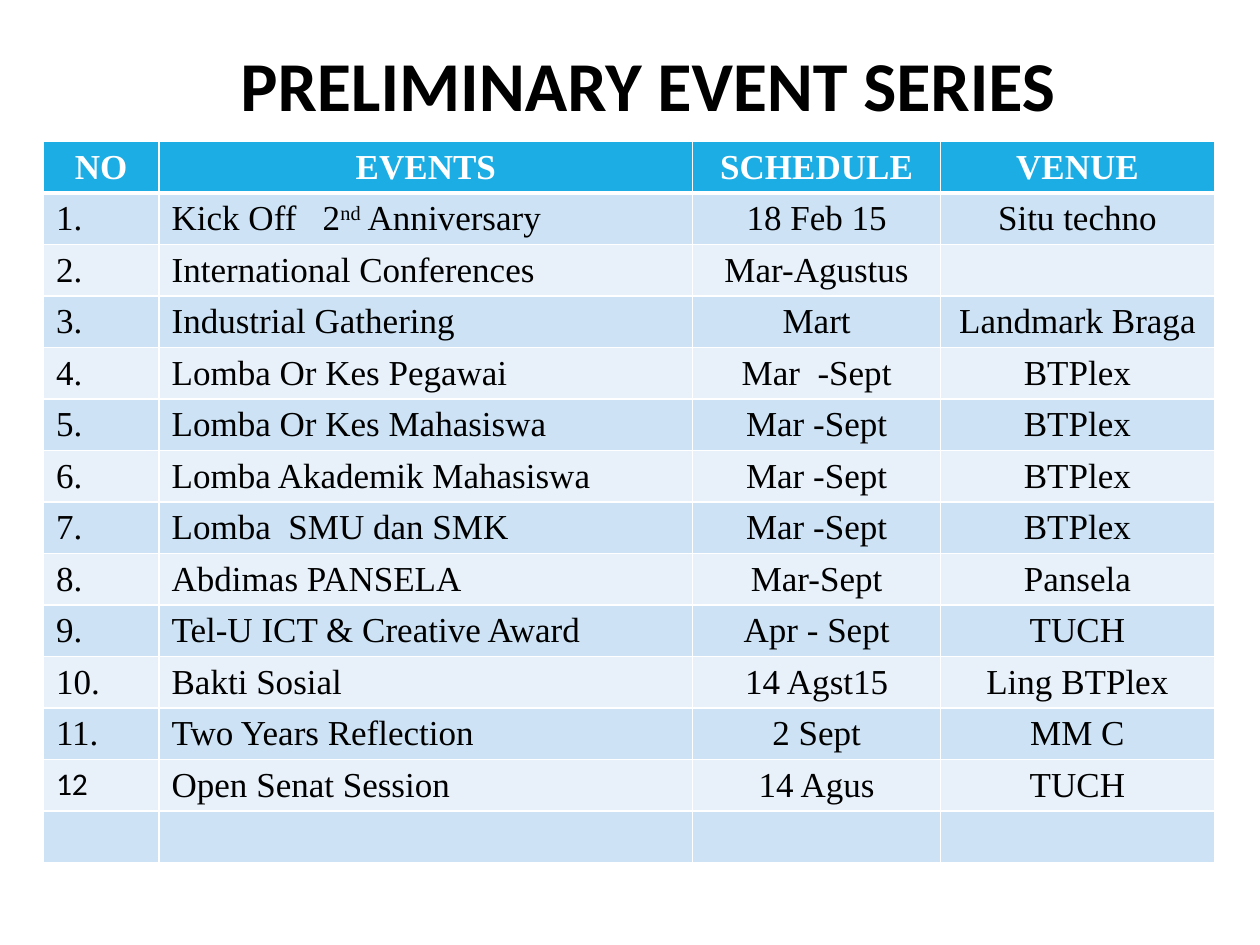
import pptx
import pptx.dml.color
import pptx.enum.text
import pptx.oxml
import pptx.oxml.ns
import pptx.util

Pt = pptx.util.Pt
RGBColor = pptx.dml.color.RGBColor
ALIGN = pptx.enum.text.PP_ALIGN

BLACK = RGBColor(0x00, 0x00, 0x00)
WHITE = RGBColor(0xFF, 0xFF, 0xFF)
HEADER_BLUE = RGBColor(0x1C, 0xAD, 0xE4)
BAND_COLORS = (RGBColor(0xE8, 0xF1, 0xFA), RGBColor(0xCD, 0xE3, 0xF5))

TITLE_FONT = {"name": "Calibri", "size": Pt(40), "bold": True}
HEADER_FONT = {"name": "Times New Roman", "size": Pt(20), "bold": True}
BODY_FONT = {"name": "Times New Roman", "size": Pt(20), "bold": False}
LAST_NUMBER_FONT = {"name": "Calibri", "size": Pt(18), "bold": False}

COLUMN_WIDTHS = (66.1, 305, 141.6, 156.5)
ROW_HEIGHT = 29.4
SUPERSCRIPT = "nd"

EVENTS = (
    ("NO", "EVENTS", "SCHEDULE", "VENUE"),
    ("1.", ("Kick Off   2", SUPERSCRIPT, " Anniversary"), "18 Feb 15", "Situ techno"),
    ("2.", "International Conferences", "Mar-Agustus", ""),
    ("3.", "Industrial Gathering", "Mart", "Landmark Braga"),
    ("4.", "Lomba Or Kes Pegawai", "Mar  -Sept", "BTPlex"),
    ("5.", "Lomba Or Kes Mahasiswa", "Mar -Sept", "BTPlex"),
    ("6.", "Lomba Akademik Mahasiswa", "Mar -Sept", "BTPlex"),
    ("7.", "Lomba  SMU dan SMK", "Mar -Sept", "BTPlex"),
    ("8.", "Abdimas PANSELA", "Mar-Sept", "Pansela"),
    ("9.", "Tel-U ICT & Creative Award", "Apr - Sept", "TUCH"),
    ("10.", "Bakti Sosial", "14 Agst15", "Ling BTPlex"),
    ("11.", "Two Years Reflection", "2 Sept", "MM C"),
    ("12", "Open Senat Session", "14 Agus", "TUCH"),
    ("", "", "", ""),
)


def set_attributes(target, values):
    for name, value in values.items():
        setattr(target, name, value)


def add_run(paragraph, text, font_values, color):
    run = paragraph.add_run()
    run.text = text
    set_attributes(run.font, font_values)
    run.font.color.rgb = color
    return run


def add_title(slide, text):
    shape = slide.shapes.add_textbox(Pt(130.3), Pt(20.2), Pt(491.8), Pt(55.4))
    set_attributes(shape.text_frame, {
        "word_wrap": False,
        "auto_size": pptx.enum.text.MSO_AUTO_SIZE.SHAPE_TO_FIT_TEXT,
    })
    add_run(shape.text_frame.paragraphs[0], text, TITLE_FONT, BLACK)


def set_borders(cell, widths):
    properties = cell._tc.get_or_add_tcPr()
    for index, (side, width) in enumerate(widths.items()):
        line = pptx.oxml.parse_xml(
            f'<a:ln{side} {pptx.oxml.ns.nsdecls("a")} w="{Pt(width)}">'
            f'<a:solidFill><a:srgbClr val="{WHITE}"/></a:solidFill></a:ln{side}>'
        )
        properties.insert(index, line)


def fill_cell(cell, content, font_values, color, alignment):
    paragraph = cell.text_frame.paragraphs[0]
    paragraph.alignment = alignment
    parts = (content,) if isinstance(content, str) else content
    for part in filter(None, parts):
        run = add_run(paragraph, part, font_values, color)
        if part == SUPERSCRIPT:
            run.font._element.set("baseline", "30000")


def add_event_table(slide):
    table = slide.shapes.add_table(
        len(EVENTS), len(COLUMN_WIDTHS), Pt(24.8), Pt(80.9),
        Pt(sum(COLUMN_WIDTHS)), Pt(ROW_HEIGHT * len(EVENTS)),
    ).table
    for column, width in zip(table.columns, COLUMN_WIDTHS):
        column.width = Pt(width)
    for row_index, contents in enumerate(EVENTS):
        table.rows[row_index].height = Pt(ROW_HEIGHT)
        is_header = row_index == 0
        for column_index, content in enumerate(contents):
            cell = table.cell(row_index, column_index)
            cell.fill.solid()
            cell.fill.fore_color.rgb = HEADER_BLUE if is_header else BAND_COLORS[row_index % 2]
            set_borders(cell, {
                "L": 1, "R": 1,
                "T": 3 if row_index == 1 else 1,
                "B": 3 if is_header else 1,
            })
            font_values = HEADER_FONT if is_header else BODY_FONT
            if content == "12":
                font_values = LAST_NUMBER_FONT
            centered = is_header or column_index > 1
            fill_cell(cell, content, font_values, WHITE if is_header else BLACK,
                      ALIGN.CENTER if centered else ALIGN.LEFT)


def main():
    presentation = pptx.Presentation()
    set_attributes(presentation, {"slide_width": Pt(720), "slide_height": Pt(540)})
    slide = presentation.slides.add_slide(presentation.slide_layouts[6])
    add_event_table(slide)
    add_title(slide, "PRELIMINARY EVENT SERIES")
    presentation.save("out.pptx")


if __name__ == "__main__":
    main()
